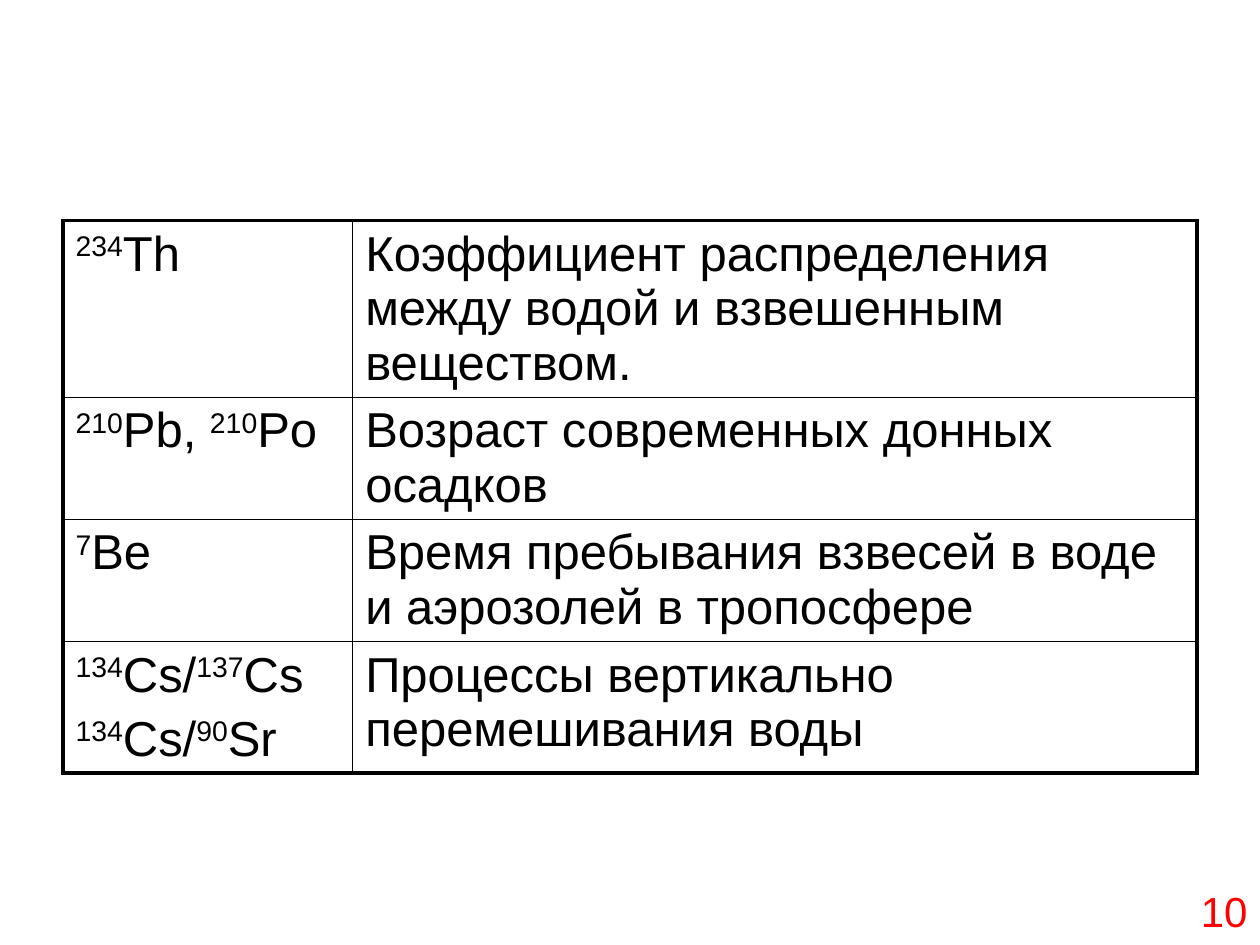
import pptx
import pptx.util
import pptx.dml.color
import pptx.enum.text
import pptx.oxml
import pptx.oxml.ns
from pptx.util import Cm, Pt

COLORS = {"text": "000000", "border": "000000", "page": "FF0000"}
FONT = "Arial"

TRACERS = [
    ([[("234", "Th")]],
     "Коэффициент распределения между водой и взвешенным веществом."),
    ([[("210", "Pb, "), ("210", "Po")]],
     "Возраст современных донных осадков"),
    ([[("7", "Be")]],
     "Время пребывания взвесей в воде и аэрозолей в тропосфере"),
    ([[("134", "Cs/"), ("137", "Cs")], [("134", "Cs/"), ("90", "Sr")]],
     "Процессы вертикально перемешивания воды"),
]
COLUMN_WIDTHS = [5.84, 17.02]
ROW_HEIGHTS = [3.56, 2.46, 2.46, 2.64]
OUTER, INNER = 2.25, 1
PAGE_NUMBER = "10"


def style(paragraph, size, color):
    paragraph.font.name = FONT
    paragraph.font.size = Pt(size)
    paragraph.font.color.rgb = pptx.dml.color.RGBColor.from_string(COLORS[color])


def write_isotopes(frame, lines):
    for index, isotopes in enumerate(lines):
        paragraph = frame.add_paragraph() if index else frame.paragraphs[0]
        if index:
            paragraph.space_before = Pt(5.6)
        for mass, symbol in isotopes:
            mass_run = paragraph.add_run()
            mass_run.text = mass
            mass_run.font._element.set("baseline", "30000")
            paragraph.add_run().text = symbol
        style(paragraph, 28, "text")


def set_borders(cell, widths):
    properties = cell._tc.get_or_add_tcPr()
    for index, (side, width) in enumerate(widths.items()):
        properties.insert(index, pptx.oxml.parse_xml(
            f'<a:ln{side} {pptx.oxml.ns.nsdecls("a")} w="{Pt(width)}"><a:solidFill>'
            f'<a:srgbClr val="{COLORS["border"]}"/></a:solidFill></a:ln{side}>'))


presentation = pptx.Presentation()
presentation.slide_width, presentation.slide_height = Cm(25.4), Cm(19.05)
slide = presentation.slides.add_slide(presentation.slide_layouts[6])

last_row, last_column = len(TRACERS) - 1, len(COLUMN_WIDTHS) - 1
tracer_table = slide.shapes.add_table(
    len(TRACERS), len(COLUMN_WIDTHS), Cm(1.27), Cm(4.45),
    Cm(sum(COLUMN_WIDTHS)), Cm(sum(ROW_HEIGHTS))).table
tracer_table.first_row = tracer_table.horz_banding = False
for column, width in zip(tracer_table.columns, COLUMN_WIDTHS):
    column.width = Cm(width)

for r, (isotope_lines, use) in enumerate(TRACERS):
    tracer_table.rows[r].height = Cm(ROW_HEIGHTS[r])
    isotope_cell, use_cell = tracer_table.rows[r].cells
    write_isotopes(isotope_cell.text_frame, isotope_lines)
    use_cell.text = use
    style(use_cell.text_frame.paragraphs[0], 28, "text")
    for c, cell in enumerate((isotope_cell, use_cell)):
        cell.fill.background()
        set_borders(cell, {
            "L": OUTER if c == 0 else INNER,
            "R": OUTER if c == last_column else INNER,
            "T": OUTER if r == 0 else INNER,
            "B": OUTER if r == last_row else INNER,
        })

page_box = slide.shapes.add_textbox(Cm(19.48), Cm(17.73), Cm(5.92), Cm(1.32))
page_box.text_frame.word_wrap = True
page_line = page_box.text_frame.paragraphs[0]
page_line.text = PAGE_NUMBER
page_line.alignment = pptx.enum.text.PP_ALIGN.RIGHT
style(page_line, 24, "page")

presentation.save("out.pptx")
